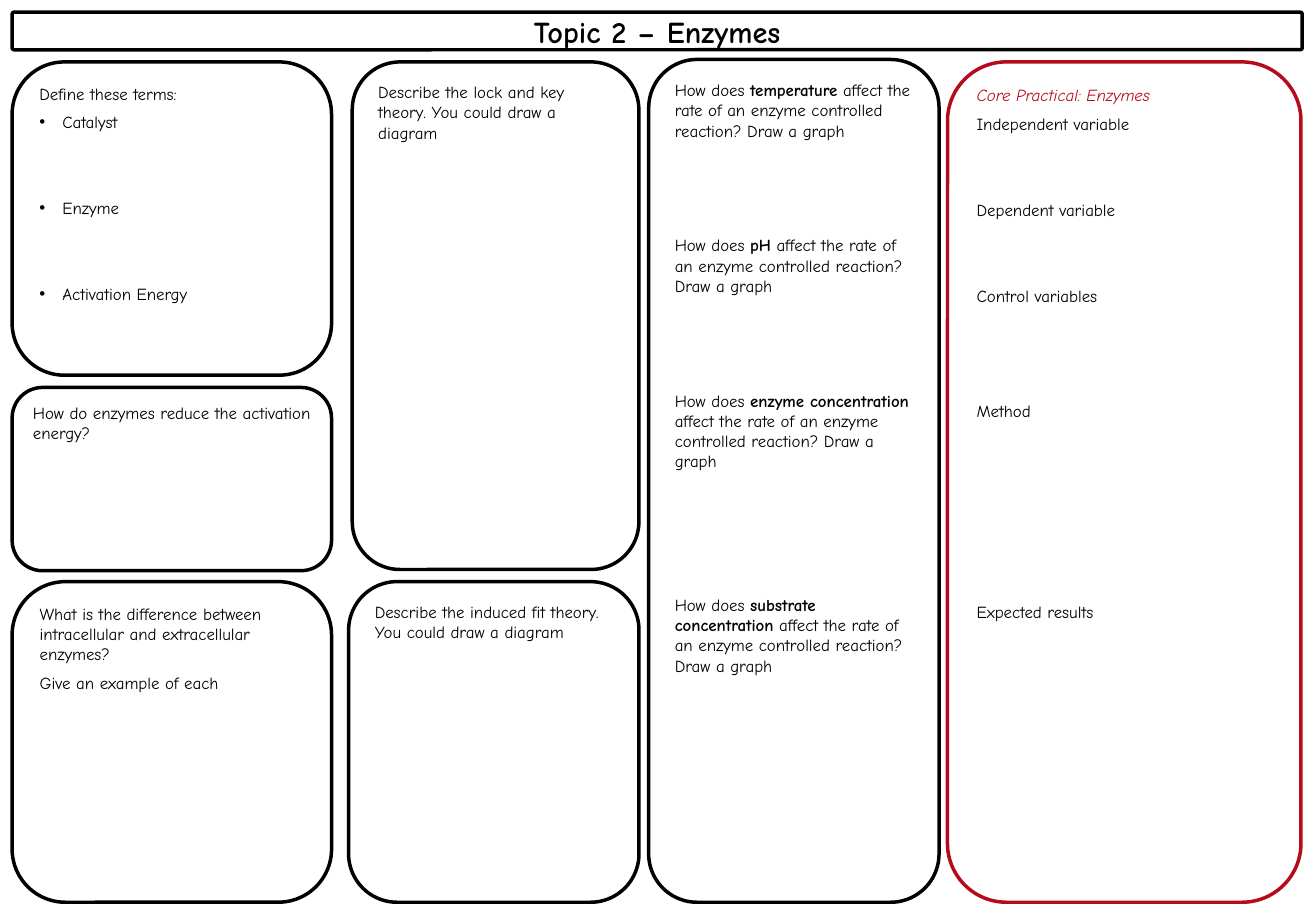
"""Build a one-page revision sheet on enzymes."""
from lxml.etree import SubElement
from pptx import Presentation
from pptx.dml.color import RGBColor
from pptx.enum.shapes import MSO_SHAPE
from pptx.enum.text import MSO_ANCHOR, PP_ALIGN
from pptx.oxml.ns import qn
from pptx.util import Inches, Pt

BLACK = RGBColor(0x00, 0x00, 0x00)
WHITE = RGBColor(0xFF, 0xFF, 0xFF)
RED = RGBColor(0xB5, 0x0B, 0x1B)
FONT = "Comic Neue"
BULLET_FONT = "Arial"
PAGE_WIDTH = Pt(780)
PAGE_HEIGHT = Pt(547.25)
BORDER = Pt(2.08)
PARAGRAPH_GAP = 5
ANSWER_LINE = 17
BULLET_INDENT = Inches(0.19)

TITLE = "Topic 2 – Enzymes"
TITLE_AREA = (0.1, 0.1, 10.62, 0.31)

GRAPH_TASK = "affect the rate of an enzyme controlled reaction? Draw a graph"
FACTORS = [("temperature", 0), ("pH", 3), ("enzyme concentration", 3),
           ("substrate concentration", 4)]

# Each entry: style, answer lines left above it, text
PANELS = [
    ((0.1, 0.51, 2.63, 2.58), BLACK, [
        ("plain", 0, "Define these terms:"),
        ("bullet", 0, "Catalyst"),
        ("bullet", 2, "Enzyme"),
        ("bullet", 2, "Activation Energy")]),
    ((7.8, 0.51, 2.91, 6.92), RED, [
        ("heading", 0, "Core Practical: Enzymes"),
        ("plain", 0, "Independent variable"),
        ("plain", 2, "Dependent variable"),
        ("plain", 2, "Control variables"),
        ("plain", 3, "Method"),
        ("plain", 6, "Expected results")]),
    ((0.1, 4.79, 2.63, 2.64), BLACK, [
        ("plain", 0, "What is the difference between intracellular and "
                     "extracellular enzymes?"),
        ("plain", 0, "Give an example of each")]),
    ((2.9, 0.51, 2.36, 4.18), BLACK, [
        ("plain", 0, "Describe the lock and key theory. "
                     "You could draw a diagram")]),
    ((2.87, 4.79, 2.39, 2.64), BLACK, [
        ("plain", 0, "Describe the induced fit theory. "
                     "You could draw a diagram")]),
    ((0.1, 3.19, 2.63, 1.51), BLACK, [
        ("plain", 0, "How do enzymes reduce the activation energy?")]),
    ((5.34, 0.49, 2.39, 6.94), BLACK, [
        ("factor", lines, factor) for factor, lines in FACTORS]),
]


def add_box(page, area, color):
    box = page.shapes.add_shape(MSO_SHAPE.ROUNDED_RECTANGLE,
                                *(Inches(length) for length in area))
    box.shadow.inherit = False
    box.fill.solid()
    box.fill.fore_color.rgb = WHITE
    box.line.color.rgb = color
    box.line.width = BORDER
    return box


def set_font(para, size, color=BLACK):
    para.font.name = FONT
    para.font.size = Pt(size)
    para.font.color.rgb = color


def add_bullet(para):
    properties = para._p.get_or_add_pPr()
    properties.set("marL", str(BULLET_INDENT))
    properties.set("indent", str(-BULLET_INDENT))
    SubElement(properties, qn("a:buFont")).set("typeface", BULLET_FONT)
    SubElement(properties, qn("a:buChar")).set("char", "•")


def add_entry(para, style, space, text):
    para.alignment = PP_ALIGN.LEFT
    para.space_before = Pt(space)
    if style == "bullet":
        add_bullet(para)
    set_font(para, 10, RED if style == "heading" else BLACK)
    if style == "heading":
        para.font.italic = True
    spans = [text]
    if style == "factor":
        spans = ["How does ", text, " " + GRAPH_TASK]
    for words in spans:
        span = para.add_run()
        span.text = words
        if style == "factor" and words == text:
            span.font.bold = True


def add_panel(page, area, color, entries):
    frame = add_box(page, area, color).text_frame
    frame.word_wrap = True
    frame.vertical_anchor = MSO_ANCHOR.TOP
    for index, (style, lines, text) in enumerate(entries):
        para = frame.add_paragraph() if index else frame.paragraphs[0]
        space = PARAGRAPH_GAP + lines * ANSWER_LINE if index else 0
        add_entry(para, style, space, text)


def add_title(page):
    box = add_box(page, TITLE_AREA, BLACK)
    box.adjustments[0] = 0.05
    box.fill.background()
    box.text_frame.vertical_anchor = MSO_ANCHOR.MIDDLE
    para = box.text_frame.paragraphs[0]
    para.text = TITLE
    para.alignment = PP_ALIGN.CENTER
    set_font(para, 18)
    para.font.bold = True


def main():
    deck = Presentation()
    deck.slide_width = PAGE_WIDTH
    deck.slide_height = PAGE_HEIGHT
    page = deck.slides.add_slide(deck.slide_layouts[6])
    add_title(page)
    for area, color, entries in PANELS:
        add_panel(page, area, color, entries)
    deck.save("out.pptx")


if __name__ == "__main__":
    main()
